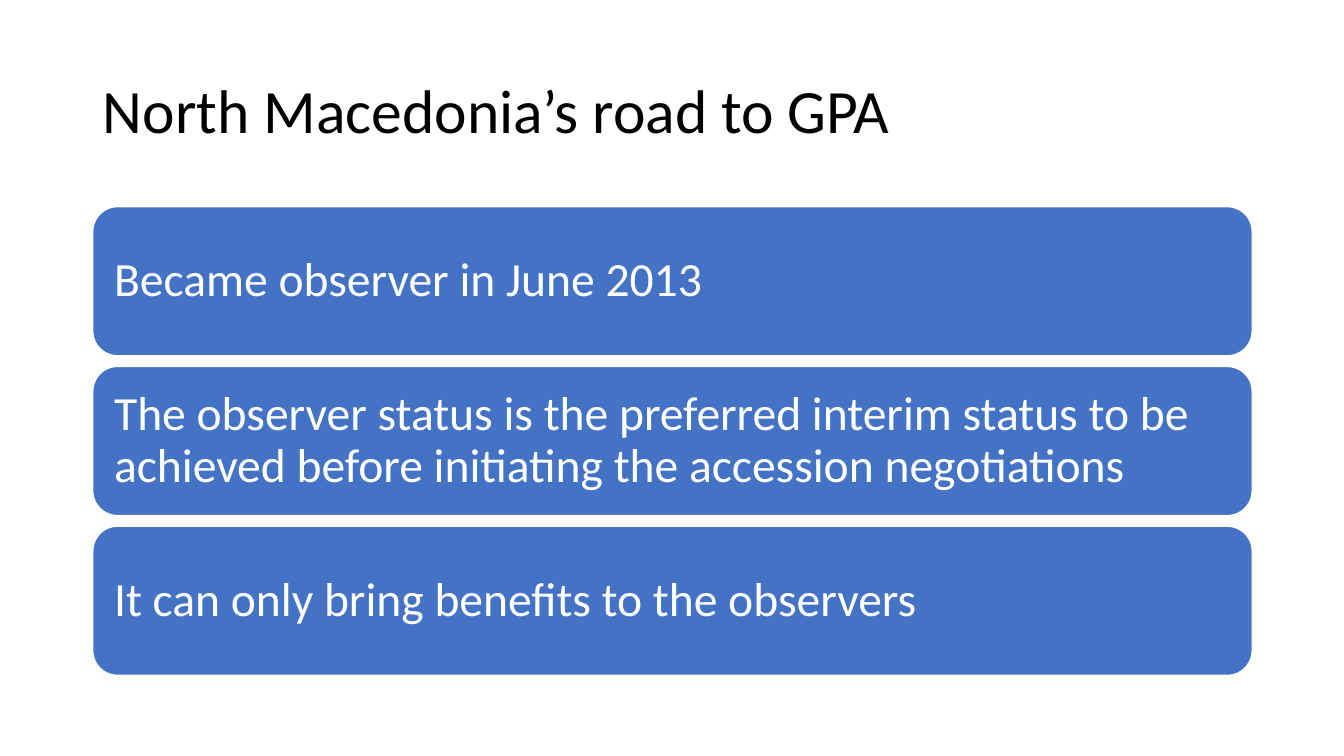
from pptx import Presentation
from pptx.dml.color import RGBColor
from pptx.enum.shapes import MSO_SHAPE
from pptx.enum.text import MSO_ANCHOR, MSO_AUTO_SIZE, PP_ALIGN
from pptx.util import Inches, Pt

ROUNDED = MSO_SHAPE.ROUNDED_RECTANGLE
MIDDLE = MSO_ANCHOR.MIDDLE
LEFT = PP_ALIGN.LEFT
NO_AUTOFIT = MSO_AUTO_SIZE.NONE

COLORS = {"ink": "000000", "panel": "4472C4", "paper": "FFFFFF"}
FONT = "Calibri"
MARGIN, WIDTH = 0.92, 11.5
TITLE_TOP, TITLE_HEIGHT = 0.4, 1.45
ROWS_TOP, ROW_HEIGHT, ROW_GAP = 2.05, 1.48, 0.105

MILESTONES = [
    "Became observer in June 2013",
    "The observer status is the preferred interim status to be achieved "
    "before initiating the accession negotiations",
    "It can only bring benefits to the observers",
]


def write(tf, text, size, color, inset_x=0.1, inset_y=0.05):
    tf.word_wrap = True
    tf.auto_size = NO_AUTOFIT
    tf.vertical_anchor = MIDDLE
    tf.margin_left = tf.margin_right = Inches(inset_x)
    tf.margin_top = tf.margin_bottom = Inches(inset_y)
    p = tf.paragraphs[0]
    p.alignment = LEFT
    p.line_spacing = 0.9
    p.space_before = Pt(0)
    r = p.add_run()
    r.text = text
    r.font.name = FONT
    r.font.size = Pt(size)
    r.font.color.rgb = RGBColor.from_string(COLORS[color])


class Deck:
    def __init__(self):
        self.prs = Presentation()
        self.prs.slide_width = Inches(13.33)
        self.prs.slide_height = Inches(7.5)
        self.slide = self.prs.slides.add_slide(self.prs.slide_layouts[5])

    def title(self, text):
        sp = self.slide.shapes.title
        sp.left, sp.top = Inches(MARGIN), Inches(TITLE_TOP)
        sp.width, sp.height = Inches(WIDTH), Inches(TITLE_HEIGHT)
        write(sp.text_frame, text, size=44, color="ink")

    def panel(self, row, text):
        top = ROWS_TOP + row * (ROW_HEIGHT + ROW_GAP)
        sp = self.slide.shapes.add_shape(
            ROUNDED, Inches(MARGIN), Inches(top), Inches(WIDTH), Inches(ROW_HEIGHT)
        )
        sp.shadow.inherit = False
        sp.fill.solid()
        sp.fill.fore_color.rgb = RGBColor.from_string(COLORS["panel"])
        sp.line.color.rgb = RGBColor.from_string(COLORS["paper"])
        sp.line.width = Pt(1)
        write(sp.text_frame, text, size=34, color="paper", inset_x=0.14, inset_y=0.14)


def main():
    deck = Deck()
    deck.title("North Macedonia’s road to GPA")
    for row, text in enumerate(MILESTONES):
        deck.panel(row, text)
    deck.prs.save("out.pptx")


if __name__ == "__main__":
    main()
